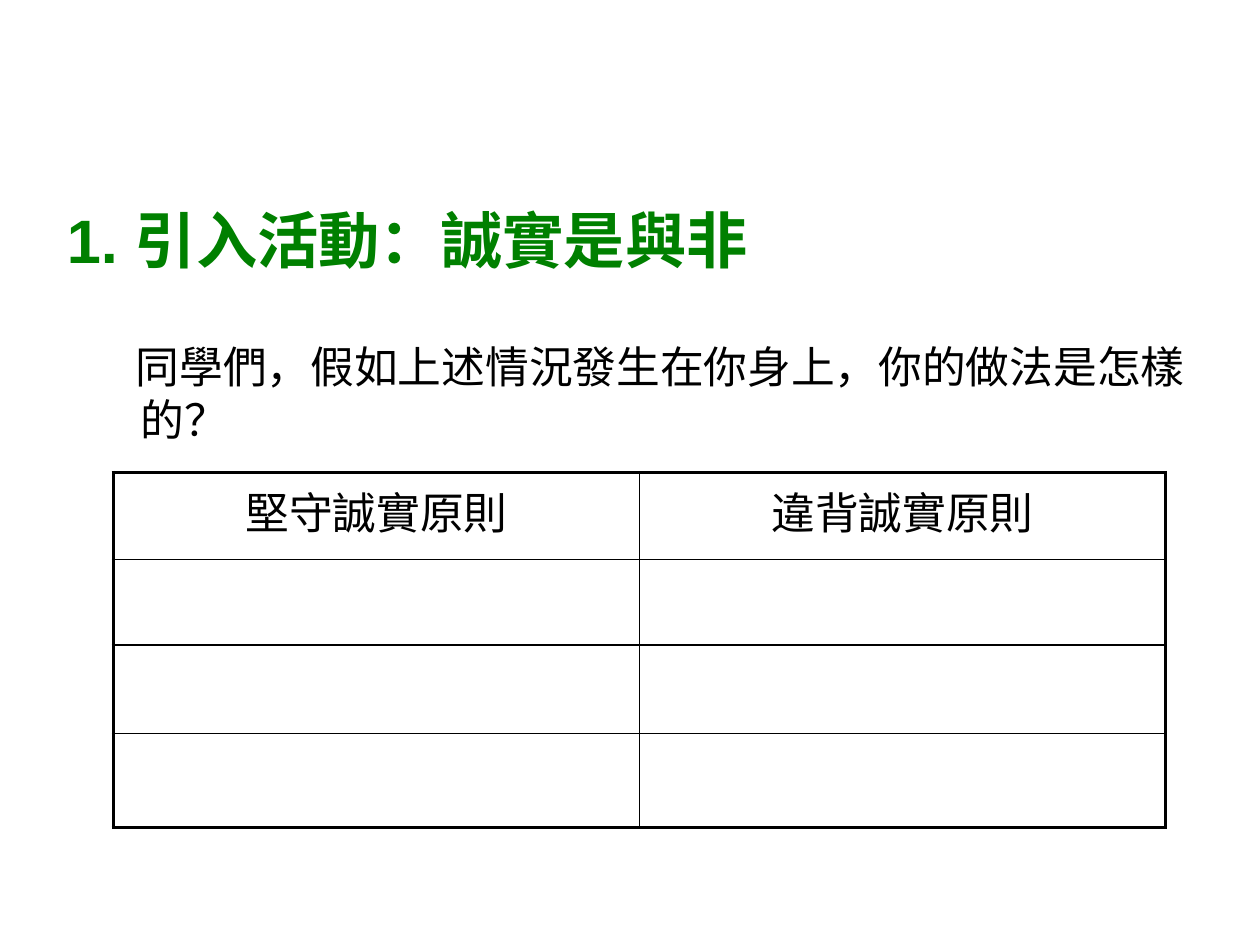
import lxml.etree
import pptx
import pptx.dml.color
import pptx.enum.text
import pptx.oxml.ns
import pptx.util

Inches = pptx.util.Inches
ALIGN = pptx.enum.text.PP_ALIGN
ANCHOR = pptx.enum.text.MSO_ANCHOR
COLORS = {"heading": "008000", "text": "000000", "border": "000000"}
FONT = "Arial"
HEADERS = ["堅守誠實原則", "違背誠實原則"]
ROW_HEIGHTS = [0.69, 0.68, 0.7, 0.75]
OUTER_LINE, INNER_LINE = 2.25, 1


def write_text(frame, text, size=25, color="text", bold=False, align=ALIGN.LEFT):
    """Write one formatted paragraph and return it."""
    paragraph = frame.paragraphs[0]
    paragraph.alignment = align
    run = paragraph.add_run()
    run.text = text
    run.font.name = FONT
    run.font.size = pptx.util.Pt(size)
    run.font.bold = bold
    run.font.color.rgb = pptx.dml.color.RGBColor.from_string(COLORS[color])
    return paragraph


def add_title(slide, left, top, width, height):
    """Place and format the title placeholder."""
    title = slide.shapes.title
    title.left, title.top, title.width, title.height = map(Inches, (left, top, width, height))
    title.text_frame.vertical_anchor = ANCHOR.MIDDLE
    write_text(title.text_frame, "1. 引入活動：誠實是與非", size=35, color="heading", bold=True)


def add_question(slide, left, top, width, height):
    """Add the question with a slightly hanging first line."""
    box = slide.shapes.add_textbox(*map(Inches, (left, top, width, height)))
    box.text_frame.word_wrap = True
    paragraph = write_text(box.text_frame, "同學們，假如上述情況發生在你身上，你的做法是怎樣的？")
    properties = paragraph._p.get_or_add_pPr()
    properties.set("marL", str(Inches(0.19)))
    properties.set("indent", str(Inches(-0.04)))


def set_borders(cell, widths):
    """Draw the cell borders, given a width in points for each side."""
    properties = cell._tc.get_or_add_tcPr()
    for index, (side, width) in enumerate(widths.items()):
        line = lxml.etree.Element(pptx.oxml.ns.qn(f"a:ln{side}"), w=str(pptx.util.Pt(width)))
        fill = lxml.etree.SubElement(line, pptx.oxml.ns.qn("a:solidFill"))
        lxml.etree.SubElement(fill, pptx.oxml.ns.qn("a:srgbClr"), val=COLORS["border"])
        properties.insert(index, line)


def add_answer_table(slide, left, top, width, height):
    """Add the two-column answer table with a heavier outer frame."""
    row_count, column_count = len(ROW_HEIGHTS), len(HEADERS)
    table = slide.shapes.add_table(
        row_count, column_count, *map(Inches, (left, top, width, height))
    ).table
    table.first_row = table.horz_banding = False
    for row_index, row_height in enumerate(ROW_HEIGHTS):
        table.rows[row_index].height = Inches(row_height)
        for column_index, header in enumerate(HEADERS):
            cell = table.cell(row_index, column_index)
            cell.fill.background()
            edges = {
                "L": column_index == 0,
                "R": column_index == column_count - 1,
                "T": row_index == 0,
                "B": row_index == row_count - 1,
            }
            set_borders(cell, {side: OUTER_LINE if outer else INNER_LINE
                               for side, outer in edges.items()})
            if row_index == 0:
                write_text(cell.text_frame, header, align=ALIGN.CENTER)


def main():
    """Build and save the presentation."""
    presentation = pptx.Presentation()
    presentation.slide_width, presentation.slide_height = Inches(10), Inches(7.5)
    slide = presentation.slides.add_slide(presentation.slide_layouts[5])
    add_title(slide, 0.43, 1.39, 9, 1.02)
    add_question(slide, 0.83, 2.65, 8.98, 0.87)
    add_answer_table(slide, 0.9, 3.75, 8.35, sum(ROW_HEIGHTS))
    presentation.save("out.pptx")


if __name__ == "__main__":
    main()
